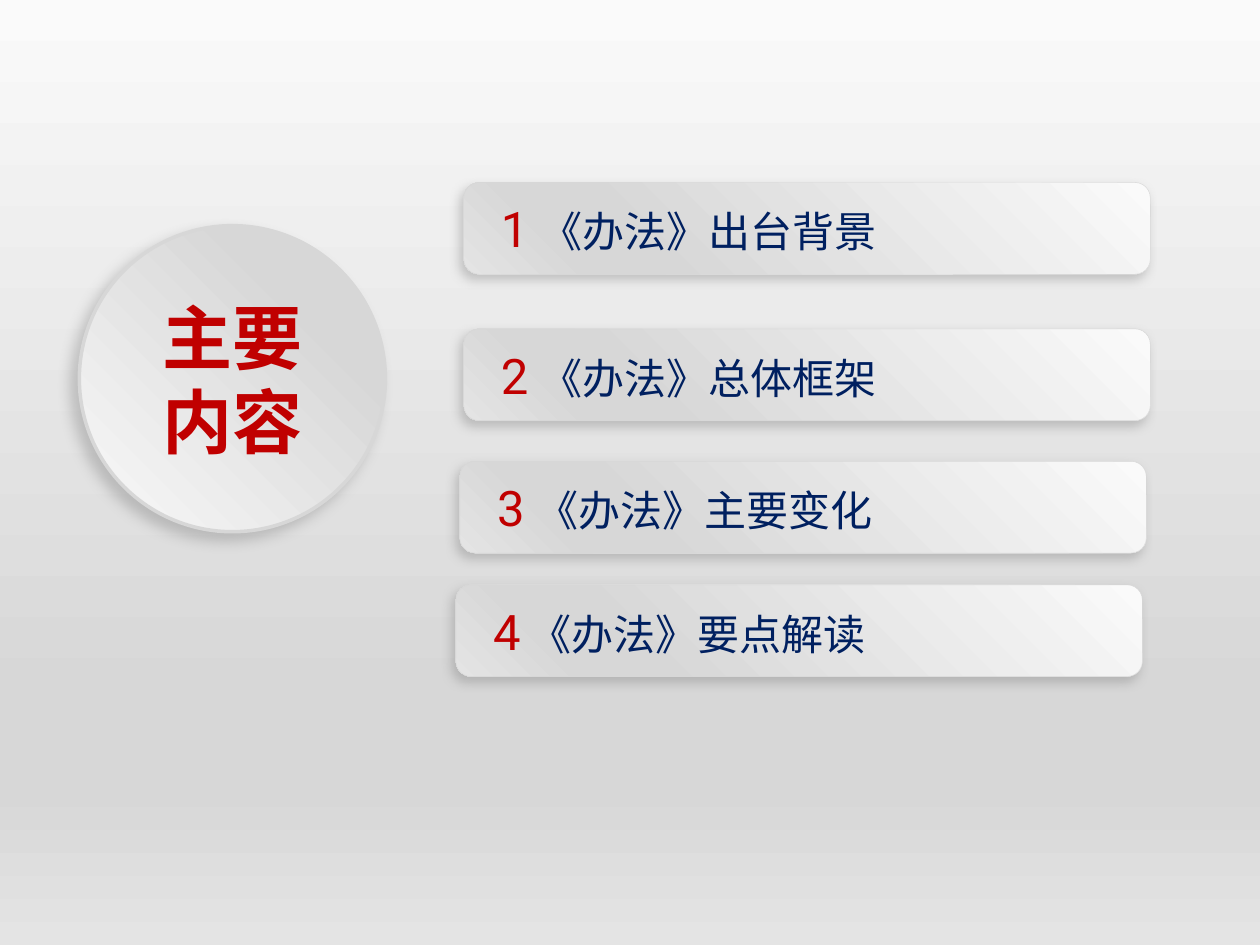
from lxml import etree
from pptx import Presentation
from pptx.dml.color import RGBColor
from pptx.enum.shapes import MSO_SHAPE
from pptx.enum.text import MSO_ANCHOR, PP_ALIGN
from pptx.oxml.ns import qn
from pptx.util import Cm, Pt

BANNER, CIRCLE = MSO_SHAPE.FLOWCHART_ALTERNATE_PROCESS, MSO_SHAPE.OVAL
MIDDLE = MSO_ANCHOR.MIDDLE
LEFT, CENTER = PP_ALIGN.LEFT, PP_ALIGN.CENTER

RED = RGBColor(0xC0, 0x00, 0x00)
NAVY = RGBColor(0x00, 0x20, 0x60)
SILVER = RGBColor(0xD7, 0xD7, 0xD7)
PALE = RGBColor(0xFA, 0xFA, 0xFA)
MIST = RGBColor(0xE4, 0xE4, 0xE4)
SHADE = RGBColor(0x80, 0x80, 0x80)
STOPS = ((0, PALE), (74, SILVER), (83, SILVER), (100, MIST))

LATIN_FONT, CHINESE_FONT = "Roboto", "Noto Sans CJK SC"
BANNER_WIDTH, BANNER_HEIGHT = Cm(13.84), Cm(1.85)
BANNERS = (
    (9.35, 3.68, "1 ", "《办法》出台背景"),
    (9.35, 6.63, "2 ", "《办法》总体框架"),
    (9.27, 9.3, "3 ", "《办法》主要变化"),
    (9.19, 11.79, "4", " 《办法》要点解读"),
)


def add_color(parent, color):
    """Append an RGB colour element and return it."""
    return etree.SubElement(parent, qn("a:srgbClr"), val=str(color))


def paint_gradient(fill, owner, angle):
    """Give the owner of a fill the silver gradient, angle in clockwise degrees."""
    fill.background()
    empty = owner.find(".//" + qn("a:noFill"))
    gradient = etree.Element(qn("a:gradFill"), rotWithShape="1")
    stops = etree.SubElement(gradient, qn("a:gsLst"))
    for position, color in STOPS:
        add_color(etree.SubElement(stops, qn("a:gs"), pos=str(position * 1000)), color)
    etree.SubElement(gradient, qn("a:lin"), ang=str(angle * 60000), scaled="0")
    empty.getparent().replace(empty, gradient)


def cast_shadow(shape, distance, blur, angle):
    """Add a soft outer shadow, with lengths in points."""
    shape.shadow.inherit = False
    effects = shape.element.spPr.find(qn("a:effectLst"))
    shadow = etree.SubElement(
        effects, qn("a:outerShdw"), blurRad=str(Pt(blur)), dist=str(Pt(distance)),
        dir=str(angle * 60000), algn="ctr", rotWithShape="0")
    etree.SubElement(add_color(shadow, SHADE), qn("a:alpha"), val="40000")


def add_panel(page, kind, bounds, angle, line_width, shadow):
    """Add a raised silver panel."""
    panel = page.shapes.add_shape(kind, *bounds)
    paint_gradient(panel.fill, panel.element.spPr, angle)
    panel.line.color.rgb = SILVER
    panel.line.width = Pt(line_width)
    cast_shadow(panel, *shadow)
    panel.text_frame.word_wrap = True
    panel.text_frame.vertical_anchor = MIDDLE
    return panel


def add_span(para, text, size, font, color, bold=False):
    """Add one run with its font set for Latin and Chinese text."""
    span = para.add_run()
    span.text = text
    span.font.size = Pt(size)
    span.font.bold = bold
    span.font.color.rgb = color
    span.font.name = font
    etree.SubElement(span.font._element, qn("a:ea"), typeface=font)


def add_title(page):
    """Add the round title panel."""
    bounds = Cm(1.6), Cm(4.55), Cm(6.17), Cm(6.17)
    circle = add_panel(page, CIRCLE, bounds, 315, 2, (6, 8, 140))
    para = circle.text_frame.paragraphs[0]
    para.alignment = CENTER
    add_span(para, "主要内容", 40, CHINESE_FONT, RED, bold=True)


def add_banner(page, left, top, number, topic):
    """Add one numbered topic banner."""
    bounds = Cm(left), Cm(top), BANNER_WIDTH, BANNER_HEIGHT
    banner = add_panel(page, BANNER, bounds, 135, 0.25, (4, 6, 135))
    para = banner.text_frame.paragraphs[0]
    para.alignment = LEFT
    para._p.get_or_add_pPr().set("marL", str(Cm(0.41)))
    add_span(para, number, 28, LATIN_FONT, RED)
    add_span(para, topic, 24, CHINESE_FONT, NAVY)


def main():
    """Build and save the contents slide."""
    deck = Presentation()
    deck.slide_width, deck.slide_height = Cm(25.4), Cm(19.05)
    page = deck.slides.add_slide(deck.slide_layouts[6])
    paint_gradient(page.background.fill, page.element, 90)
    add_title(page)
    for banner in BANNERS:
        add_banner(page, *banner)
    deck.save("out.pptx")


if __name__ == "__main__":
    main()
